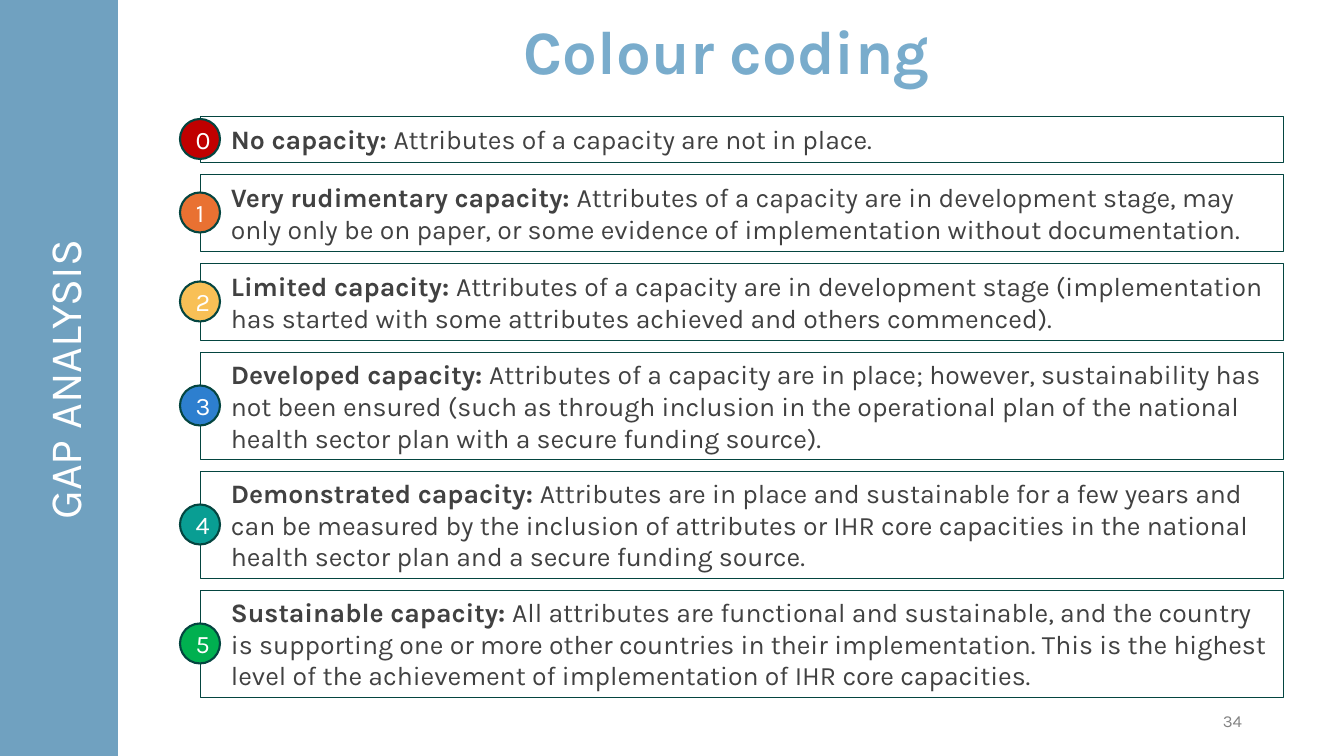
from pptx import Presentation
from pptx.dml.color import RGBColor
from pptx.enum.shapes import MSO_SHAPE
from pptx.enum.text import MSO_ANCHOR, PP_ALIGN
from pptx.util import Emu, Pt

# Content: heading, description, number of text lines, badge colour
LEVELS = [
    ("No capacity: ", "Attributes of a capacity are not in place.", 1, "red"),
    ("Very rudimentary capacity: ",
     "Attributes of a capacity are in development stage, may only only be on paper, "
     "or some evidence of implementation without documentation.", 2, "orange"),
    ("Limited capacity: ",
     "Attributes of a capacity are in development stage (implementation has started "
     "with some attributes achieved and others commenced).", 2, "yellow"),
    ("Developed capacity: ",
     "Attributes of a capacity are in place; however, sustainability has not been "
     "ensured (such as through inclusion in the operational plan of the national "
     "health sector plan with a secure funding source).", 3, "blue"),
    ("Demonstrated capacity: ",
     "Attributes are in place and sustainable for a few years and can be measured by "
     "the inclusion of attributes or IHR core capacities in the national health "
     "sector plan and a secure funding source.", 3, "teal"),
    ("Sustainable capacity: ",
     "All attributes are functional and sustainable, and the country is supporting "
     "one or more other countries in their implementation. This is the highest level "
     "of the achievement of implementation of IHR core capacities.", 3, "green"),
]
COLOURS = {
    "sidebar": "70A1C0", "title": "79ACCC", "text": "414141", "outline": "044540",
    "white": "FFFFFF", "number": "838383",
    "red": "C00000", "orange": "E97132", "yellow": "F8C056",
    "blue": "2D7FCF", "teal": "099E93", "green": "00B050",
}
FONT = "Karla"

# Layout in px
SLIDE_WIDTH, SLIDE_HEIGHT = 1344, 756
BOX_LEFT, BOX_TOP, BOX_WIDTH, BOX_GAP = 200, 116, 1083, 12
BOX_HEIGHTS = {1: 46, 2: 77, 3: 107}
BADGE = 40


def px(length):
    return Emu(round(length * 914400 / 100.8))


def colour(name):
    return RGBColor.from_string(COLOURS[name])


def add_box(kind, left, top, width, height, fill=None, line_width=None):
    shape = slide.shapes.add_shape(kind, px(left), px(top), px(width), px(height))
    shape.shadow.inherit = False
    if fill:
        shape.fill.solid()
        shape.fill.fore_color.rgb = colour(fill)
    else:
        shape.fill.background()
    if line_width:
        shape.line.color.rgb = colour("outline")
        shape.line.width = Pt(line_width)
    else:
        shape.line.fill.background()
    return shape


def add_label(left, top, width, height):
    return slide.shapes.add_textbox(px(left), px(top), px(width), px(height))


def write(shape, runs, size, colour_name, align, anchor=MSO_ANCHOR.MIDDLE, insets=None):
    frame = shape.text_frame
    frame.word_wrap = True
    frame.vertical_anchor = anchor
    if insets:
        (frame.margin_left, frame.margin_top,
         frame.margin_right, frame.margin_bottom) = map(px, insets)
    paragraph = frame.paragraphs[0]
    paragraph.alignment = align
    for text, bold in runs:
        run = paragraph.add_run()
        run.text = text
        run.font.name = FONT
        run.font.size = Pt(size)
        run.font.bold = bold
        run.font.color.rgb = colour(colour_name)
    return paragraph


presentation = Presentation()
presentation.slide_width, presentation.slide_height = px(SLIDE_WIDTH), px(SLIDE_HEIGHT)
slide = presentation.slides.add_slide(presentation.slide_layouts[6])

# Sidebar with rotated section name
add_box(MSO_SHAPE.RECTANGLE, 0, 0, 118, SLIDE_HEIGHT, "sidebar")
section = add_label(-302, 341, SLIDE_HEIGHT, 77)
section.rotation = 270
paragraph = write(section, [("GAP ANALYSIS", False)], 32, "white",
                  PP_ALIGN.CENTER, MSO_ANCHOR.TOP)
paragraph.line_spacing = 0.9

# Page number
write(add_label(950, 701, 302, 40), [("34", False)], 12, "number", PP_ALIGN.RIGHT)

# Capacity levels, each with a badge centred on the left edge
top = BOX_TOP
for level, (heading, description, lines, badge_colour) in enumerate(LEVELS):
    height = BOX_HEIGHTS[lines]
    box = add_box(MSO_SHAPE.RECTANGLE, BOX_LEFT, top, BOX_WIDTH, height, line_width=0.5)
    write(box, [(heading, True), (description, False)], 19, "text",
          PP_ALIGN.LEFT, insets=(31, 8, 12, 8))
    badge = add_box(MSO_SHAPE.OVAL, BOX_LEFT - BADGE / 2, top + (height - BADGE) / 2,
                    BADGE, BADGE, badge_colour, 1.5)
    write(badge, [(str(level), False)], 18, "white", PP_ALIGN.CENTER)
    top += height + BOX_GAP

# Title
write(add_label(288, 26, 878, 47), [("Colour coding", True)], 44, "title",
      PP_ALIGN.CENTER, insets=(4, 5, 4, 5))

presentation.save("out.pptx")
